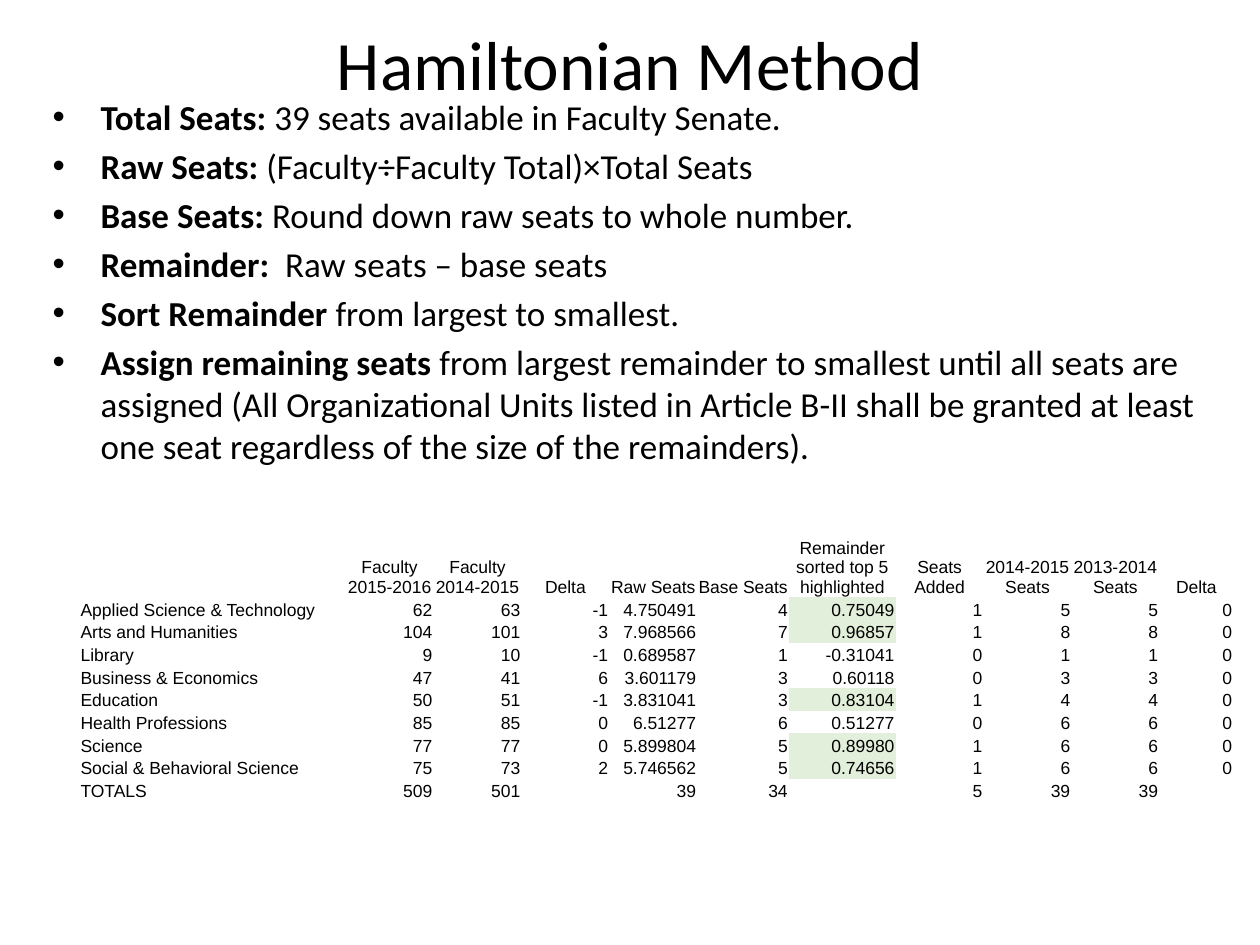
import pptx
import pptx.util
import pptx.dml.color
import pptx.enum.text
from pptx.oxml.ns import qn
from lxml import etree

Inches, Pt = pptx.util.Inches, pptx.util.Pt
ALIGN = pptx.enum.text.PP_ALIGN
ANCHOR = pptx.enum.text.MSO_ANCHOR

# Content
TITLE = "Hamiltonian Method"
STEPS = [
    ("Total Seats: ", "39 seats available in Faculty Senate."),
    ("Raw Seats:", " (Faculty÷Faculty Total)×Total Seats"),
    ("Base Seats:", " Round down raw seats to whole number."),
    ("Remainder:", "  Raw seats – base seats"),
    ("Sort Remainder", " from largest to smallest."),
    ("Assign remaining seats",
     " from largest remainder to smallest until all seats are assigned "
     "(All Organizational Units listed in Article B-II shall be granted at "
     "least one seat regardless of the size of the remainders)."),
]
HEADER = ["", "Faculty 2015-2016", "Faculty 2014-2015", "Delta", "Raw Seats",
          "Base Seats", "Remainder sorted top 5 highlighted", "Seats Added",
          "2014-2015 Seats", "2013-2014 Seats", "Delta"]
UNITS = [
    ["Applied Science & Technology", "62", "63", "-1", "4.750491", "4", "0.75049", "1", "5", "5", "0"],
    ["Arts and Humanities", "104", "101", "3", "7.968566", "7", "0.96857", "1", "8", "8", "0"],
    ["Library", "9", "10", "-1", "0.689587", "1", "-0.31041", "0", "1", "1", "0"],
    ["Business & Economics", "47", "41", "6", "3.601179", "3", "0.60118", "0", "3", "3", "0"],
    ["Education", "50", "51", "-1", "3.831041", "3", "0.83104", "1", "4", "4", "0"],
    ["Health Professions", "85", "85", "0", "6.51277", "6", "0.51277", "0", "6", "6", "0"],
    ["Science", "77", "77", "0", "5.899804", "5", "0.89980", "1", "6", "6", "0"],
    ["Social & Behavioral Science", "75", "73", "2", "5.746562", "5", "0.74656", "1", "6", "6", "0"],
]
TOTALS = ["TOTALS", "509", "501", "", "39", "34", "", "5", "39", "39", ""]
REMAINDER, ADDED = 6, 7

# Layout and format
TABLE_WIDTH = 9.16
COLUMN_SHARES = [2.12, 0.7, 0.7, 0.7, 0.7, 0.73, 0.85, 0.7, 0.7, 0.7, 0.59]
HEADER_HEIGHT, ROW_HEIGHT = 0.53, 0.18
NO_GRID_STYLE = "{2D5ABB26-0587-4C30-8999-92F81FD0307C}"
TITLE_FONT = {"name": "Calibri", "size": Pt(39.6)}
STEP_FONT = {"name": "Calibri", "size": Pt(20)}
CELL_FONT = {"name": "Arial", "size": Pt(10)}
CELL_FORMAT = {"vertical_anchor": ANCHOR.BOTTOM, "margin_left": Inches(0.01),
               "margin_right": Inches(0.01), "margin_top": Inches(0.01),
               "margin_bottom": 0}


def apply(target, values):
    for name, value in values.items():
        setattr(target, name, value)


def color(hex_value):
    return pptx.dml.color.RGBColor.from_string(hex_value)


def add_run(paragraph, text, font, bold=False):
    run = paragraph.add_run()
    run.text = text
    apply(run.font, {**font, "bold": bold})
    run.font.color.rgb = color("000000")


def add_bullet(paragraph):
    properties = paragraph._p.get_or_add_pPr()
    properties.set("marL", str(Inches(0.38)))
    properties.set("indent", str(-Inches(0.38)))
    etree.SubElement(properties, qn("a:buFont")).set("typeface", "Arial")
    etree.SubElement(properties, qn("a:buChar")).set("char", "•")


def add_title(slide):
    title = slide.shapes.title
    apply(title, {"left": Inches(0.5), "top": Inches(0.3),
                  "width": Inches(9), "height": Inches(0.39)})
    apply(title.text_frame, {"vertical_anchor": ANCHOR.MIDDLE, "word_wrap": True,
                             "auto_size": pptx.enum.text.MSO_AUTO_SIZE.NONE})
    paragraph = title.text_frame.paragraphs[0]
    paragraph.alignment = ALIGN.CENTER
    add_run(paragraph, TITLE, TITLE_FONT)


def add_steps(slide):
    box = slide.shapes.add_textbox(Inches(0.32), Inches(0.71), Inches(9.33), Inches(5.63))
    frame = box.text_frame
    frame.word_wrap = True
    for index, (term, explanation) in enumerate(STEPS):
        paragraph = frame.add_paragraph() if index else frame.paragraphs[0]
        add_bullet(paragraph)
        if index:
            paragraph.space_before = Pt(4)
        add_run(paragraph, term, STEP_FONT, bold=True)
        add_run(paragraph, explanation, STEP_FONT)


def fill_cell(cell, text, alignment, highlighted):
    apply(cell, CELL_FORMAT)
    paragraph = cell.text_frame.paragraphs[0]
    paragraph.alignment = alignment
    if text:
        add_run(paragraph, text, CELL_FONT)
    else:  # keeps an empty cell from stretching its row
        etree.SubElement(paragraph._p, qn("a:endParaRPr")).set("sz", "1000")
    if highlighted:
        cell.fill.solid()
        cell.fill.fore_color.rgb = color("E2EFDA")
    else:
        cell.fill.background()


def add_seat_table(slide):
    rows = [HEADER, *UNITS, TOTALS]
    heights = [HEADER_HEIGHT] + [ROW_HEIGHT] * (len(rows) - 1)
    table = slide.shapes.add_table(
        len(rows), len(HEADER), Inches(0.63), Inches(4.21),
        Inches(TABLE_WIDTH), Inches(sum(heights))).table
    apply(table, {"first_row": False, "horz_banding": False})
    table._tbl.tblPr.find(qn("a:tableStyleId")).text = NO_GRID_STYLE
    for column, share in zip(table.columns, COLUMN_SHARES):
        column.width = Inches(TABLE_WIDTH * share / sum(COLUMN_SHARES))
    for row_index, values in enumerate(rows):
        table.rows[row_index].height = Inches(heights[row_index])
        for column_index, text in enumerate(values):
            if row_index == 0:
                alignment = ALIGN.CENTER
            else:
                alignment = ALIGN.RIGHT if column_index else ALIGN.LEFT
            # Units that gained a seat have the top remainders
            highlighted = (column_index == REMAINDER and values in UNITS
                           and values[ADDED] == "1")
            fill_cell(table.cell(row_index, column_index), text, alignment, highlighted)


def main():
    presentation = pptx.Presentation()
    apply(presentation, {"slide_width": Inches(10), "slide_height": Inches(7.5)})
    slide = presentation.slides.add_slide(presentation.slide_layouts[5])
    add_title(slide)
    add_steps(slide)
    add_seat_table(slide)
    presentation.save("out.pptx")


if __name__ == "__main__":
    main()
